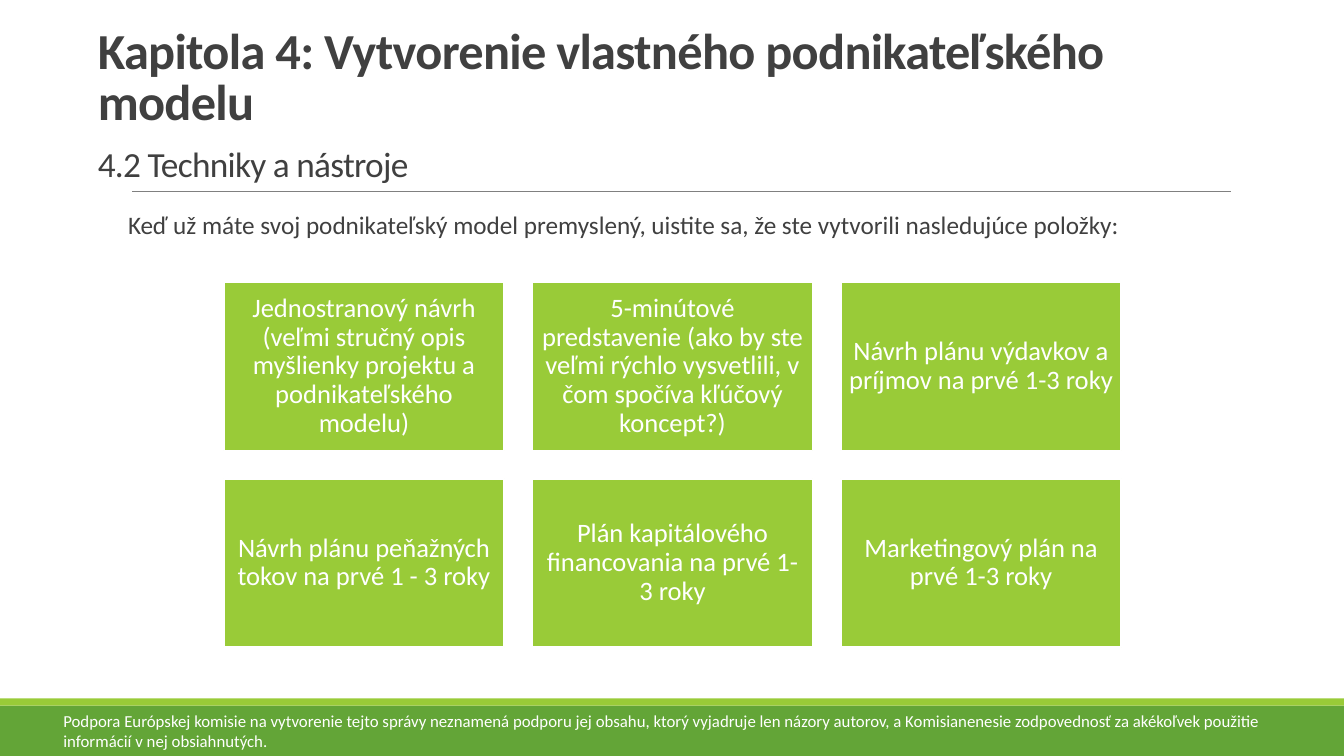
from typing import NamedTuple

from lxml import etree
from pptx import Presentation
from pptx import util as u
from pptx.dml.color import RGBColor
from pptx.enum import shapes, text
from pptx.oxml import ns

PX = 9144  # EMU per px, 100 px to the inch
FONT = "Calibri"
LIME, GREEN, WHITE, DARK, GREY = "99CB38", "63A537", "FFFFFF", "404040", "808080"


class Box(NamedTuple):
    left: int
    top: int
    width: int
    height: int


class Style(NamedTuple):
    size: float
    color: str
    bold: bool = False
    align: text.PP_ALIGN = text.PP_ALIGN.LEFT
    line: float = 1.0
    before: float = 0


PAGE = Box(0, 0, 1333, 750)
BARS = [(Box(0, 700, 1333, 50), GREEN), (Box(0, 693, 1333, 7), LIME)]
CARD = Box(222, 280, 278, 167)
GAP = 28
COLS = 3
CARDS = [
    "Jednostranový návrh (veľmi stručný opis myšlienky projektu a podnikateľského modelu)",
    "5-minútové predstavenie (ako by ste veľmi rýchlo vysvetlili, v čom spočíva kľúčový koncept?)",
    "Návrh plánu výdavkov a príjmov na prvé 1-3 roky",
    "Návrh plánu peňažných tokov na prvé 1 - 3 roky",
    "Plán kapitálového financovania na prvé 1-3 roky",
    "Marketingový plán na prvé 1-3 roky",
]
HEAD = "Kapitola 4: Vytvorenie vlastného podnikateľského modelu"
SUB = "4.2 Techniky a nástroje"
LEAD = ("Keď už máte svoj podnikateľský model premyslený, uistite sa, "
        "že ste vytvorili nasledujúce položky:")
NOTE = ("Podpora Európskej komisie na vytvorenie tejto správy neznamená podporu jej obsahu, "
        "ktorý vyjadruje len názory autorov, a Komisianenesie zodpovednosť za akékoľvek "
        "použitie informácií v nej obsiahnutých.")


def emu(px: int) -> u.Emu:
    return u.Emu(px * PX)


def rgb(code: str) -> RGBColor:
    return RGBColor.from_string(code)


def place(shape, box: Box) -> None:
    shape.left, shape.top, shape.width, shape.height = map(emu, box)


def pad(frame, x: int, y: int) -> None:
    frame.margin_left = frame.margin_right = emu(x)
    frame.margin_top = frame.margin_bottom = emu(y)


def write(para, words: str, style: Style) -> None:
    para.text = words
    para.alignment = style.align
    para.line_spacing = style.line
    para.space_before = u.Pt(style.before)
    font = para.font
    font.name, font.size, font.bold = FONT, u.Pt(style.size), style.bold
    font.color.rgb = rgb(style.color)


def block(slide, box: Box, fill: str):
    shape = slide.shapes.add_shape(shapes.MSO_SHAPE.RECTANGLE, *map(emu, box))
    shape.shadow.inherit = False
    shape.fill.solid()
    shape.fill.fore_color.rgb = rgb(fill)
    shape.line.fill.background()
    return shape


def rule(slide) -> None:
    line = slide.shapes.add_connector(
        shapes.MSO_CONNECTOR.STRAIGHT, *map(emu, (131, 190, 1221, 190)))
    line.line.color.rgb = rgb(GREY)
    line.line.width = u.Pt(0.5)
    etree.SubElement(line._element.spPr, ns.qn("a:effectLst"))


def title(slide) -> None:
    shape = slide.shapes.title
    place(shape, Box(87, 31, 1131, 157))
    frame = shape.text_frame
    frame.vertical_anchor = text.MSO_ANCHOR.BOTTOM
    head, sub = frame.paragraphs[0], frame.add_paragraph()
    write(head, HEAD, Style(36, DARK, bold=True, line=0.85))
    write(sub, SUB, Style(25.2, DARK, line=0.85, before=12.5))
    for para in (head, sub):  # tighten the letters by half a point
        para._p.get_or_add_pPr().get_or_add_defRPr().set("spc", "-50")


def lead(slide) -> None:
    shape = slide.placeholders[1]
    place(shape, Box(117, 206, 1100, 458))
    frame = shape.text_frame
    pad(frame, 0, 5)
    para = frame.paragraphs[0]
    write(para, LEAD, Style(18, DARK, align=text.PP_ALIGN.JUSTIFY, line=0.9))
    props = para._p.get_or_add_pPr()
    props.set("marL", str(emu(10)))
    props.set("indent", "0")
    props.insert_element_before(etree.Element(ns.qn("a:buNone")), "a:defRPr")


def note(slide) -> None:
    frame = slide.shapes.add_textbox(*map(emu, Box(53, 700, 1230, 50))).text_frame
    frame.word_wrap = True
    write(frame.paragraphs[0], NOTE, Style(12, WHITE))


def card(slide, spot: int, words: str) -> None:
    row, col = divmod(spot, COLS)
    box = CARD._replace(left=CARD.left + col * (CARD.width + GAP),
                        top=CARD.top + row * (CARD.height + GAP))
    shape = block(slide, box, LIME)
    shape.line.color.rgb = rgb(WHITE)
    shape.line.width = u.Pt(1.25)
    frame = shape.text_frame
    frame.word_wrap = True
    frame.vertical_anchor = text.MSO_ANCHOR.MIDDLE
    pad(frame, 8, 8)
    write(frame.paragraphs[0], words,
          Style(19, WHITE, align=text.PP_ALIGN.CENTER, line=0.9))


def main() -> None:
    deck = Presentation()
    deck.slide_width, deck.slide_height = emu(PAGE.width), emu(PAGE.height)
    slide = deck.slides.add_slide(deck.slide_layouts[1])
    for box, fill in BARS:
        block(slide, box, fill)
    rule(slide)
    title(slide)
    note(slide)
    lead(slide)
    for spot, words in enumerate(CARDS):
        card(slide, spot, words)
    deck.save("out.pptx")


if __name__ == "__main__":
    main()
